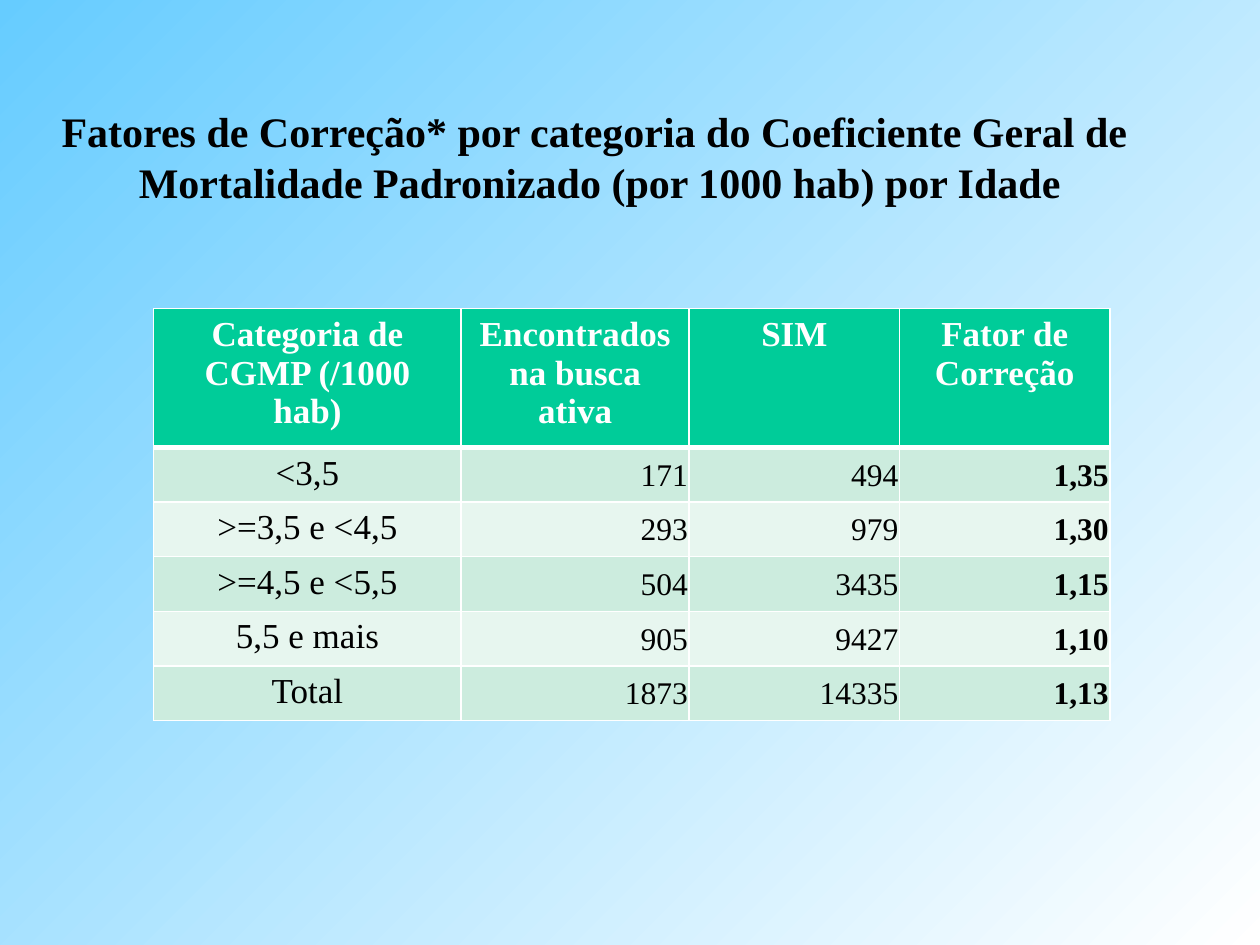
"""Build a slide with a table of correction factors by mortality category."""
from pptx import Presentation
from pptx.dml.color import RGBColor as RGB
from pptx.enum.text import MSO_ANCHOR as Anchor, MSO_AUTO_SIZE as Auto, PP_ALIGN as Align
from pptx.oxml.ns import qn
from pptx.util import Inches, Pt
from lxml.etree import SubElement as Sub

FONT = "Times New Roman"
SKY = RGB(0x66, 0xCC, 0xFF)
WHITE = RGB(0xFF, 0xFF, 0xFF)
BLACK = RGB(0, 0, 0)
GREEN = RGB(0x00, 0xCC, 0x99)
MINT = RGB(0xCC, 0xEC, 0xDE)
PALE = RGB(0xE7, 0xF6, 0xEF)

TITLE = [
    "Fatores de Correção* por categoria do Coeficiente Geral de ",
    "Mortalidade Padronizado (por 1000 hab) por Idade",
]
ROWS = [
    ["Categoria de CGMP (/1000 hab)", "Encontrados na busca ativa", "SIM", "Fator de Correção"],
    ["<3,5", "171", "494", "1,35"],
    [">=3,5 e <4,5", "293", "979", "1,30"],
    [">=4,5 e <5,5", "504", "3435", "1,15"],
    ["5,5 e mais", "905", "9427", "1,10"],
    ["Total", "1873", "14335", "1,13"],
]
WIDTHS = [2.44, 1.81, 1.67, 1.67]
HEIGHTS = [1.09] + [0.43] * 5


def write(para, text, size, color, bold, align):
    para.alignment = align
    run = para.add_run()
    run.text = text
    font = run.font
    font.name, font.size, font.bold = FONT, Pt(size), bold
    font.color.rgb = color


def border(cell, side, width):
    line = Sub(cell._tc.get_or_add_tcPr(), qn(f"a:ln{side}"), w=str(Pt(width)))
    fill = Sub(line, qn("a:solidFill"))
    Sub(fill, qn("a:srgbClr"), val=str(WHITE))


prs = Presentation()
prs.slide_width, prs.slide_height = Inches(10), Inches(7.5)
slide = prs.slides.add_slide(prs.slide_layouts[5])

back = slide.background.fill
back.gradient()
back.gradient_angle = 315
for stop, color in zip(back.gradient_stops, [SKY, WHITE]):
    stop.color.rgb = color

title = slide.shapes.title
title.left, title.top = Inches(0.35), Inches(0.79)
title.width, title.height = Inches(8.82), Inches(0.91)
frame = title.text_frame
frame.word_wrap = False
frame.auto_size = Auto.SHAPE_TO_FIT_TEXT
frame.vertical_anchor = Anchor.TOP
for i, text in enumerate(TITLE):
    para = frame.add_paragraph() if i else frame.paragraphs[0]
    write(para, text, 24, BLACK, True, Align.CENTER)

table = slide.shapes.add_table(
    len(ROWS), len(WIDTHS), Inches(1.22), Inches(2.45),
    Inches(sum(WIDTHS)), Inches(sum(HEIGHTS)),
).table
for col, width in zip(table.columns, WIDTHS):
    col.width = Inches(width)
for row, height in zip(table.rows, HEIGHTS):
    row.height = Inches(height)

for r, texts in enumerate(ROWS):
    for c, text in enumerate(texts):
        cell = table.cell(r, c)
        head, number = r == 0, r > 0 and c > 0
        for side in "LRTB":
            thick = (r, side) in [(0, "B"), (1, "T")]
            border(cell, side, 3 if thick else 1)
        cell.fill.solid()
        cell.fill.fore_color.rgb = GREEN if head else MINT if r % 2 else PALE
        if number:
            cell.vertical_anchor = Anchor.MIDDLE
            cell.margin_left = cell.margin_right = cell.margin_top = Inches(0.01)
            cell.margin_bottom = 0
        write(
            cell.text_frame.paragraphs[0], text, 18 if number else 20,
            WHITE if head else BLACK, head or c == 3,
            Align.RIGHT if number else Align.CENTER,
        )

prs.save("out.pptx")
